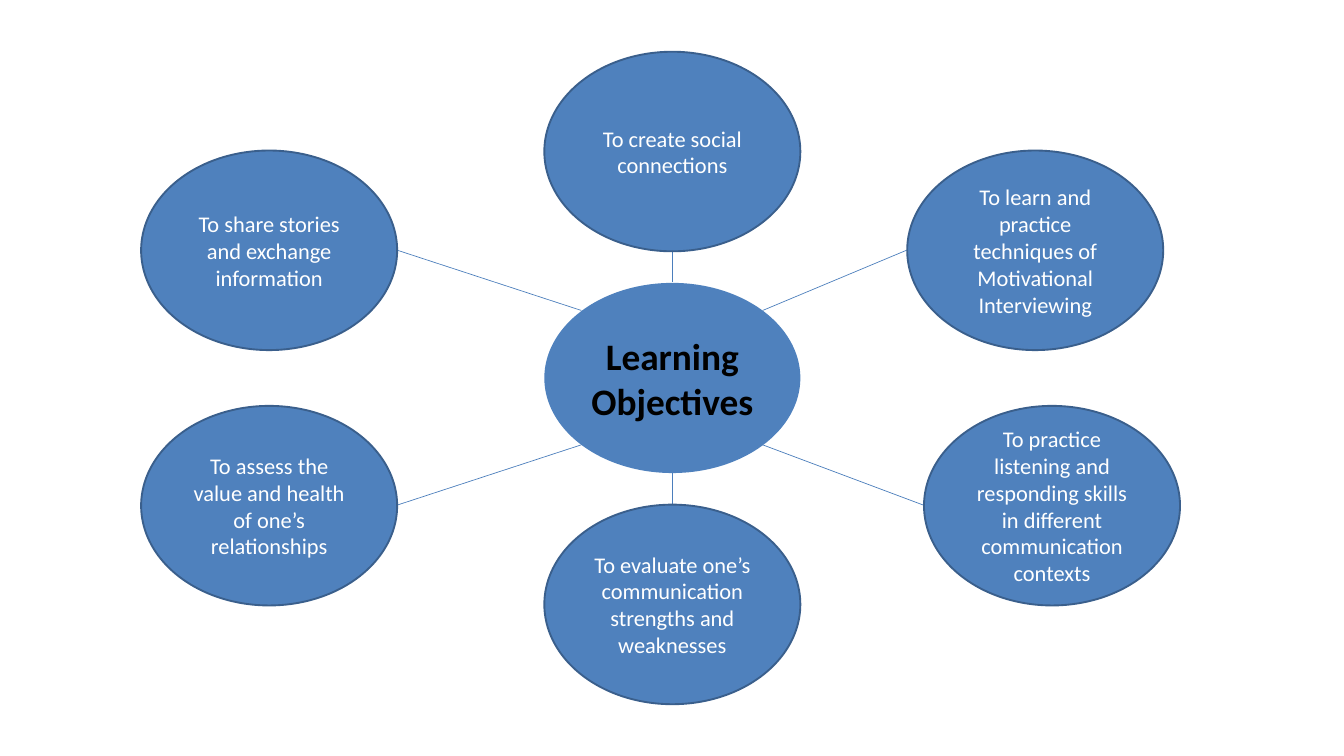
import math
from dataclasses import dataclass

from pptx import Presentation
from pptx import util as u
from pptx.dml.color import RGBColor
from pptx.enum import shapes, text
from pptx.oxml.ns import qn
from lxml import etree

PX = u.Inches(1) // 100
OVAL_W, OVAL_H, HUB_H = 381, 297, 283
HUB = (1000, 562)


@dataclass(frozen=True)
class Theme:
    """Colours, font and type sizes of the slide."""
    fill: RGBColor = RGBColor.from_string("4F81BD")
    outline: RGBColor = RGBColor.from_string("3A5F8C")
    link: RGBColor = RGBColor.from_string("4B7EBC")
    hub_text: RGBColor = RGBColor.from_string("000000")
    node_text: RGBColor = RGBColor.from_string("FFFFFF")
    font: str = "Calibri"
    hub_size: int = 40
    node_size: int = 24


THEME = Theme()

# Direction from the hub, centre, paragraphs
OBJECTIVES = [
    ((0, -1), (1000, 225), ["To create social connections"]),
    ((1, -1), (1540, 372),
     ["To learn and practice techniques of Motivational Interviewing"]),
    ((1, 1), (1565, 752),
     ["To practice listening and responding skills in different",
      "communication contexts"]),
    ((0, 1), (1000, 899),
     ["To evaluate one’s communication strengths and weaknesses"]),
    ((-1, 1), (400, 752),
     ["To assess the value and health of one’s relationships"]),
    ((-1, -1), (400, 372), ["To share stories and exchange information"]),
]


def px(n):
    """Turn pixels into EMU."""
    return u.Emu(n * PX)


def add_oval(slide, centre, height, lines, size, color, bold=False):
    """Add a filled ellipse with centred text and return it."""
    x, y = centre
    sp = slide.shapes.add_shape(
        shapes.MSO_SHAPE.OVAL, px(x - OVAL_W // 2), px(y - height // 2),
        px(OVAL_W), px(height))
    sp.shadow.inherit = False
    sp.fill.solid()
    sp.fill.fore_color.rgb = THEME.fill
    sp.line.fill.background()
    tf = sp.text_frame
    tf.word_wrap = True
    tf.vertical_anchor = text.MSO_ANCHOR.MIDDLE
    tf.text = "\n".join(lines)
    for p in tf.paragraphs:
        p.alignment = text.PP_ALIGN.CENTER
        p.font.name = THEME.font
        p.font.size = u.Pt(size)
        p.font.bold = bold
        p.font.color.rgb = color
    return sp


def add_objective(slide, centre, lines):
    """Add an outlined objective ellipse."""
    sp = add_oval(slide, centre, OVAL_H, lines, THEME.node_size,
                  THEME.node_text)
    sp.line.color.rgb = THEME.outline
    sp.line.width = u.Pt(2)


def add_link(slide, direction, centre):
    """Join the hub's edge to the facing side of an objective."""
    dx, dy = direction
    reach = math.hypot(dx, dy)
    start = (HUB[0] + round(dx / reach * OVAL_W / 2),
             HUB[1] + round(dy / reach * HUB_H / 2))
    if dx:
        end = (centre[0] - dx * (OVAL_W // 2), centre[1])
    else:
        end = (centre[0], centre[1] - dy * (OVAL_H // 2))
    line = slide.shapes.add_connector(
        shapes.MSO_CONNECTOR.STRAIGHT, *map(px, start + end))
    line.line.color.rgb = THEME.link
    line.line.width = u.Pt(0.75)
    etree.SubElement(line._element.spPr, qn("a:effectLst"))


def main():
    """Build the learning objectives slide."""
    prs = Presentation()
    prs.slide_width, prs.slide_height = px(2000), px(1125)
    slide = prs.slides.add_slide(prs.slide_layouts[6])
    add_oval(slide, HUB, HUB_H, ["Learning Objectives"], THEME.hub_size,
             THEME.hub_text, bold=True)
    for direction, centre, lines in OBJECTIVES:
        add_link(slide, direction, centre)
        add_objective(slide, centre, lines)
    prs.save("out.pptx")


if __name__ == "__main__":
    main()
